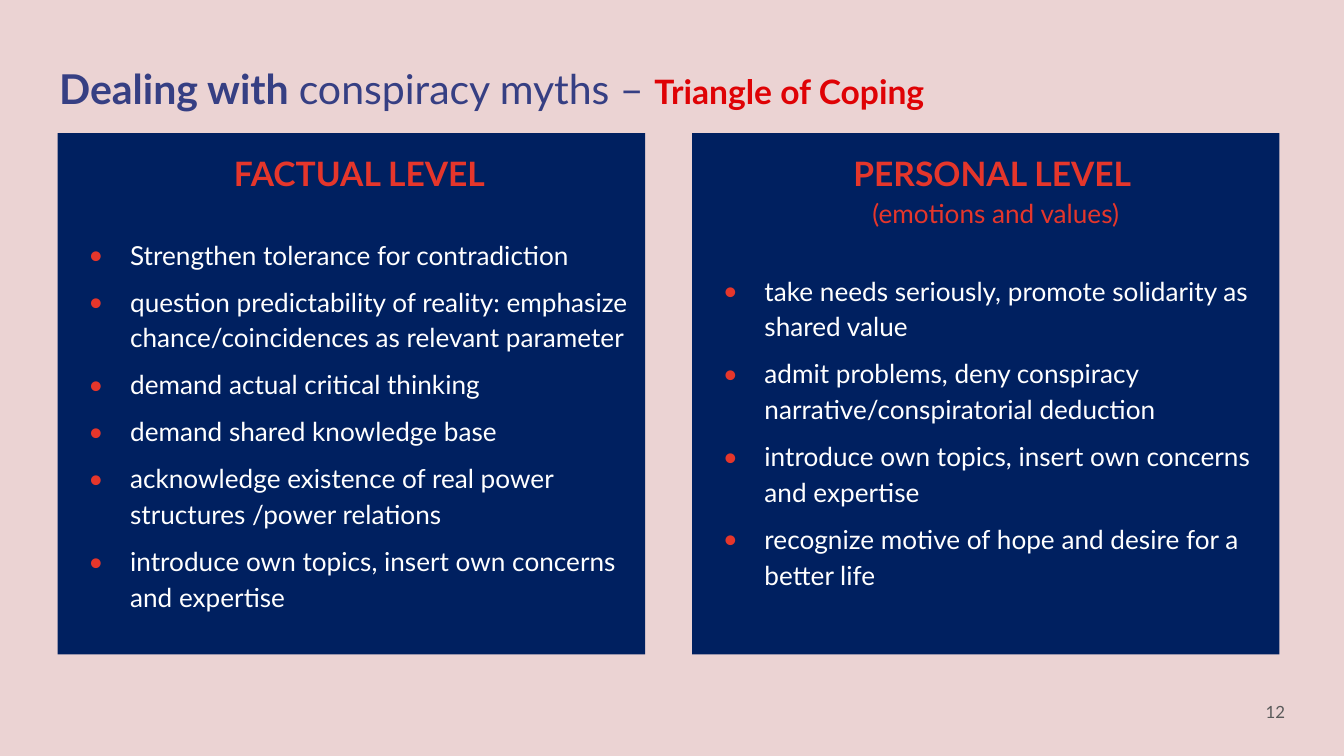
from lxml import etree
from pptx import Presentation
from pptx import util as u
from pptx.dml.color import RGBColor
from pptx.enum import shapes, text
from pptx.oxml.ns import qn

COLORS = {
    "background": "EBD3D3",
    "panel": "002060",
    "title": "363F83",
    "highlight": "DF0205",
    "accent": "E5362B",
    "body": "FFFFFF",
    "number": "595959",
}
FONT = "Lato"

# Each panel: heading, subheading, heading indent, bullet points
PANELS = [
    ("FACTUAL LEVEL", None, 0.12, [
        "Strengthen tolerance for contradiction",
        "question predictability of reality: emphasize chance/coincidences as relevant parameter",
        "demand actual critical thinking",
        "demand shared knowledge base",
        "acknowledge existence of real power structures /power relations",
        "introduce own topics, insert own concerns and expertise",
    ]),
    ("PERSONAL LEVEL ", "(emotions and values)", 0.15, [
        "take needs seriously, promote solidarity as shared value",
        "admit problems, deny conspiracy narrative/conspiratorial deduction",
        "introduce own topics, insert own concerns and expertise",
        "recognize motive of hope and desire for a better life",
    ]),
]
PANEL_LEFT, PANEL_STEP = 0.43, 4.72


class SlideBuilder:
    def __init__(self, prs):
        self.slide = prs.slides.add_slide(prs.slide_layouts[5])
        fill = self.slide.background.fill
        fill.solid()
        fill.fore_color.rgb = RGBColor.from_string(COLORS["background"])

    def style(self, font, size, color, bold=False):
        font.name = FONT
        font.size = u.Pt(size)
        font.bold = bold
        font.color.rgb = RGBColor.from_string(COLORS[color])

    def frame(self, shape, anchor=text.MSO_ANCHOR.TOP):
        frame = shape.text_frame
        frame.word_wrap = True
        frame.auto_size = text.MSO_AUTO_SIZE.NONE
        frame.vertical_anchor = anchor
        frame.margin_left = frame.margin_right = u.Inches(0.1)
        frame.margin_top = frame.margin_bottom = u.Inches(0.1)
        return frame

    def run(self, paragraph, words, *style):
        run = paragraph.add_run()
        run.text = words
        self.style(run.font, *style)

    def title(self, parts, left, top, width, height):
        title = self.slide.shapes.title
        title.left, title.top = u.Inches(left), u.Inches(top)
        title.width, title.height = u.Inches(width), u.Inches(height)
        paragraph = self.frame(title).paragraphs[0]
        paragraph.alignment = text.PP_ALIGN.LEFT
        for part in parts:
            self.run(paragraph, *part)

    def panel(self, left, heading, subheading, indent, points):
        panel = self.slide.shapes.add_shape(
            shapes.MSO_SHAPE.RECTANGLE,
            u.Inches(left), u.Inches(0.99), u.Inches(4.37), u.Inches(3.88))
        panel.shadow.inherit = False
        panel.fill.solid()
        panel.fill.fore_color.rgb = RGBColor.from_string(COLORS["panel"])
        panel.line.fill.background()

        frame = self.frame(panel)
        head = frame.paragraphs[0]
        head.alignment = text.PP_ALIGN.CENTER
        head.line_spacing = 1.15
        head.space_after = u.Pt(19.3)
        head._p.get_or_add_pPr().set("marL", str(u.Inches(indent)))
        self.run(head, heading, 18, "accent", True)
        if subheading:
            head.add_line_break()
            self.run(head, subheading, 14, "accent")
        for point in points:
            self.bullet(frame.add_paragraph(), point)

    def bullet(self, paragraph, words):
        paragraph.text = words
        paragraph.alignment = text.PP_ALIGN.LEFT
        paragraph.line_spacing = 1.14
        paragraph.space_before = paragraph.space_after = u.Pt(3)
        props = paragraph._p.get_or_add_pPr()
        props.set("marL", str(u.Inches(0.44)))
        props.set("indent", str(u.Inches(-0.31)))
        color = etree.SubElement(props, qn("a:buClr"))
        etree.SubElement(color, qn("a:srgbClr"), val=COLORS["accent"])
        etree.SubElement(props, qn("a:buFont"), typeface=FONT)
        etree.SubElement(props, qn("a:buChar"), char="•")
        self.style(paragraph.font, 14, "body")

    def page_number(self, number, left, top, width, height):
        box = self.slide.shapes.add_textbox(
            u.Inches(left), u.Inches(top), u.Inches(width), u.Inches(height))
        paragraph = self.frame(box, text.MSO_ANCHOR.MIDDLE).paragraphs[0]
        paragraph.text = number
        paragraph.alignment = text.PP_ALIGN.RIGHT
        self.style(paragraph.font, 9, "number")


def main():
    # Widescreen page, 16:9
    prs = Presentation()
    prs.slide_width = u.Inches(10)
    prs.slide_height = prs.slide_width * 9 // 16
    builder = SlideBuilder(prs)

    # Title
    builder.title([
        ("Dealing with ", 22, "title", True),
        ("conspiracy myths – ", 22, "title"),
        ("Triangle of Coping", 18, "highlight", True),
    ], 0.34, 0.37, 7.44, 0.63)

    # Two panels side by side
    for column, panel in enumerate(PANELS):
        builder.panel(PANEL_LEFT + column * PANEL_STEP, *panel)

    # Page number
    builder.page_number("12", 9.06, 5.08, 0.6, 0.43)

    prs.save("out.pptx")


if __name__ == "__main__":
    main()
